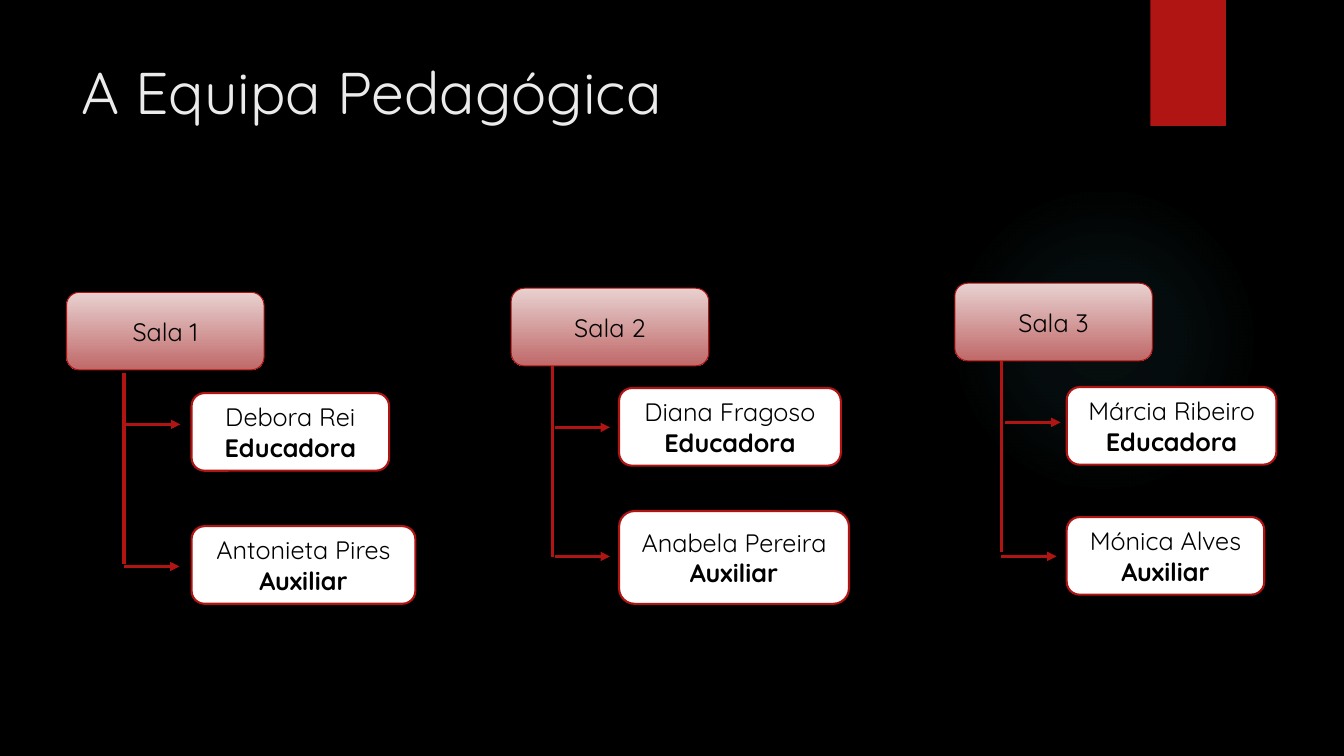
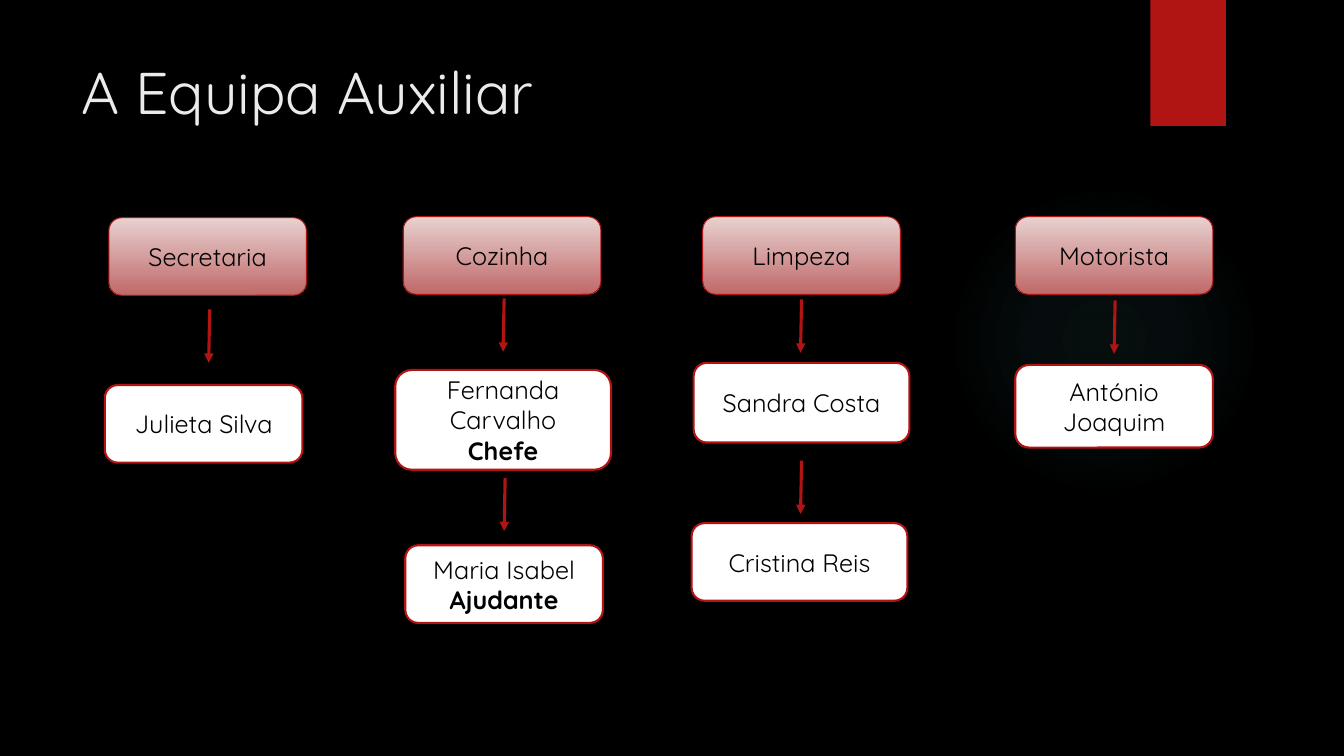
from lxml import etree
from pptx import Presentation
from pptx.dml.color import RGBColor
from pptx.enum.shapes import MSO_CONNECTOR, MSO_SHAPE
from pptx.enum.text import MSO_ANCHOR, PP_ALIGN
from pptx.oxml import parse_xml
from pptx.oxml.ns import nsdecls, qn
from pptx.util import Inches, Pt

COLORS = {
    "background": "000000",
    "red": "B01513",
    "title": "EBEBEB",
    "text": "000000",
    "card": "FFFFFF",
    "header_top": "E8D1D0",
    "header_bottom": "C06969",
    "glow": "50B9C1",
}
RGB = {name: RGBColor.from_string(value) for name, value in COLORS.items()}
FONT = "Quicksand"
CARD_W, CARD_H = 1.96, 0.77


def add_card(s, x, y, name, role=None, w=CARD_W, h=CARD_H, header=False):
    sp = s.shapes.add_shape(MSO_SHAPE.ROUNDED_RECTANGLE, Inches(x), Inches(y), Inches(w), Inches(h))
    sp.shadow.inherit = False
    if header:
        sp.fill.gradient()
        sp.fill.gradient_angle = 270
        for stop, key, position in zip(sp.fill.gradient_stops, ("header_top", "header_bottom"), (0, 1)):
            stop.color.rgb = RGB[key]
            stop.position = position
    else:
        sp.fill.solid()
        sp.fill.fore_color.rgb = RGB["card"]
    sp.line.color.rgb = RGB["red"]
    sp.line.width = Pt(0.75 if header else 1.5)
    tf = sp.text_frame
    tf.word_wrap = True
    tf.vertical_anchor = MSO_ANCHOR.MIDDLE
    for i, text in enumerate([name, role] if role else [name]):
        p = tf.add_paragraph() if i else tf.paragraphs[0]
        p.alignment = PP_ALIGN.CENTER
        r = p.add_run()
        r.text = text
        r.font.name = FONT
        r.font.size = Pt(18)
        r.font.bold = i > 0
        r.font.color.rgb = RGB["text"]


def add_line(s, x1, y1, x2, y2, arrow=True):
    cn = s.shapes.add_connector(MSO_CONNECTOR.STRAIGHT, Inches(x1), Inches(y1), Inches(x2), Inches(y2))
    cn.line.color.rgb = RGB["red"]
    cn.line.width = Pt(2.25)
    if arrow:
        etree.SubElement(cn.line._get_or_add_ln(), qn("a:tailEnd"), type="triangle")
    etree.SubElement(cn.element.spPr, qn("a:effectLst"))


prs = Presentation()
prs.slide_width, prs.slide_height = Inches(13.33), Inches(7.5)
layout = prs.slide_layouts[5]
layout.background.fill.solid()
layout.background.fill.fore_color.rgb = RGB["background"]
ph = layout.placeholders[0]
ph.left, ph.top, ph.width, ph.height = Inches(0.71), Inches(0.5), Inches(10.29), Inches(1.53)
ph.text_frame.vertical_anchor = MSO_ANCHOR.TOP

slides = []
for title in ("A Equipa Pedagógica", "A Equipa Auxiliar"):
    s = prs.slides.add_slide(layout)
    p = s.shapes.title.text_frame.paragraphs[0]
    p.alignment = PP_ALIGN.LEFT
    r = p.add_run()
    r.text = title
    r.font.name = FONT
    r.font.size = Pt(42)
    r.font.color.rgb = RGB["title"]
    slides.append(s)
teaching, support = slides

glow = teaching.shapes.add_shape(MSO_SHAPE.OVAL, Inches(9.41), Inches(1.83), Inches(3.08), Inches(3.08))
stops = "".join(
    f'<a:gs pos="{pos}000"><a:srgbClr val="{COLORS["glow"]}"><a:alpha val="{alpha}000"/></a:srgbClr></a:gs>'
    for pos, alpha in ((0, 7), (36, 6), (69, 0))
)
glow.element.spPr.insert(2, parse_xml(
    f'<a:gradFill {nsdecls("a")}><a:gsLst>{stops}</a:gsLst><a:path path="circle">'
    '<a:fillToRect l="50000" t="50000" r="50000" b="50000"/></a:path></a:gradFill>'
))
band = teaching.shapes.add_shape(MSO_SHAPE.RECTANGLE, Inches(11.41), 0, Inches(0.75), Inches(1.25))
band.fill.solid()
band.fill.fore_color.rgb = RGB["red"]
for i, sp in enumerate((glow, band)):
    sp.shadow.inherit = False
    sp.line.fill.background()
    layout.shapes.element.insert(2 + i, sp.element)

rooms = [
    ("Sala 1", 0.66, 2.9, 1.23, 3.7, [
        (1.24, 4.21, 1.9, 3.9, "Debora Rei", "Educadora", 1.96, 0.77),
        (1.23, 5.62, 1.9, 5.22, "Antonieta Pires", "Auxiliar", 2.22, 0.77),
    ]),
    ("Sala 2", 5.07, 2.86, 5.48, 3.63, [
        (5.5, 4.24, 6.14, 3.85, "Diana Fragoso", "Educadora", 2.2, 0.77),
        (5.5, 5.52, 6.14, 5.07, "Anabela Pereira", "Auxiliar", 2.28, 0.92),
    ]),
    ("Sala 3", 9.47, 2.81, 9.93, 3.58, [
        (9.97, 4.19, 10.58, 3.84, "Márcia Ribeiro", "Educadora", 2.08, 0.77),
        (9.93, 5.52, 10.58, 5.13, "Mónica Alves", "Auxiliar", 1.96, 0.77),
    ]),
]
for room, x, y, trunk_x, trunk_y, members in rooms:
    add_card(teaching, x, y, room, header=True)
    add_line(teaching, trunk_x, trunk_y, trunk_x, trunk_y + 1.9, arrow=False)
    for arrow_x, arrow_y, card_x, card_y, name, role, w, h in members:
        add_card(teaching, card_x, card_y, name, role, w, h)
        add_line(teaching, arrow_x, arrow_y, arrow_x + 0.55, arrow_y)

departments = [
    ("Secretaria", 1.08, 2.16, [
        (2.08, 3.07, 1.04, 3.82, "Julieta Silva", None, 1.96, 0.77),
    ]),
    ("Cozinha", 4, 2.15, [
        (5, 2.96, 3.92, 3.67, "Fernanda Carvalho", "Chefe", 2.14, 0.99),
        (5.01, 4.74, 4.02, 5.41, "Maria Isabel", "Ajudante", 1.96, 0.77),
    ]),
    ("Limpeza", 6.97, 2.15, [
        (7.95, 2.97, 6.88, 3.6, "Sandra Costa", None, 2.14, 0.79),
        (7.95, 4.57, 6.86, 5.19, "Cristina Reis", None, 2.14, 0.77),
    ]),
    ("Motorista", 10.07, 2.15, [
        (11.06, 2.98, 10.07, 3.62, "António Joaquim", None, 1.96, 0.82),
    ]),
]
for department, x, y, members in departments:
    add_card(support, x, y, department, header=True)
    for arrow_x, arrow_y, card_x, card_y, name, role, w, h in members:
        add_card(support, card_x, card_y, name, role, w, h)
        add_line(support, arrow_x, arrow_y, arrow_x - 0.01, arrow_y + 0.53)

prs.save("out.pptx")
